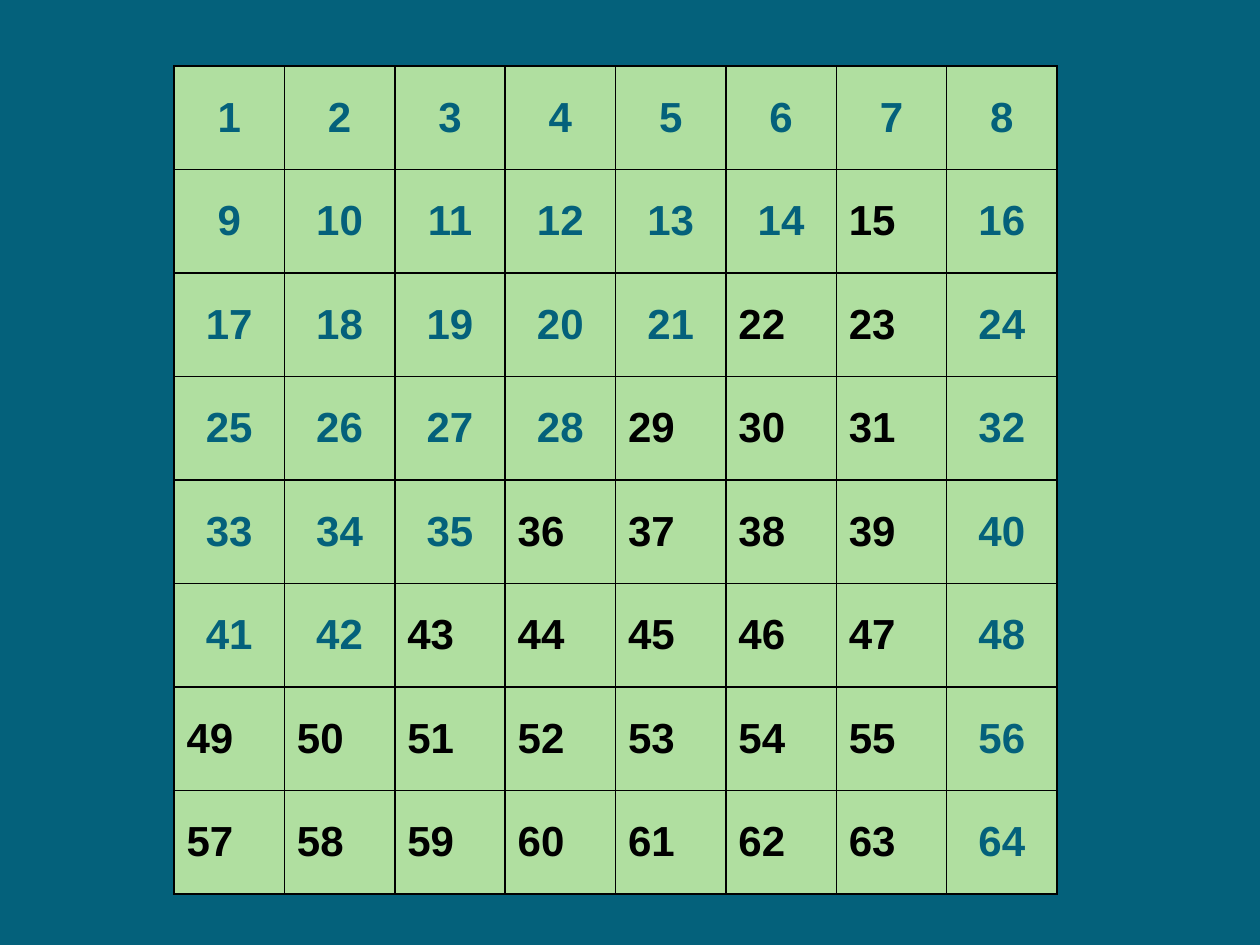
"""Build a slide with an eight by eight grid of the numbers 1 to 64."""
from lxml import etree
from pptx import Presentation
from pptx import util as u
from pptx.dml import color
from pptx.enum import text
from pptx.oxml import ns

PX = 914400 / 126
SIZE = 8
BLUE, GREEN, BLACK = "04617B", "B0DFA0", "000000"


def paint(fill, tone):
    fill.solid()
    fill.fore_color.rgb = color.RGBColor.from_string(tone)


def edge(cell):
    props = cell._tc.get_or_add_tcPr()
    for side in ("lnL", "lnR", "lnT", "lnB"):
        line = etree.SubElement(props, ns.qn(f"a:{side}"), w=str(u.Pt(1)))
        solid = etree.SubElement(line, ns.qn("a:solidFill"))
        etree.SubElement(solid, ns.qn("a:srgbClr"), val=BLACK)


deck = Presentation()
deck.slide_width, deck.slide_height = round(1260 * PX), round(945 * PX)
slide = deck.slides.add_slide(deck.slide_layouts[6])
paint(slide.background.fill, BLUE)

left, top, width, height = (round(n * PX) for n in (174, 66, 883, 828))
grid = slide.shapes.add_table(SIZE, SIZE, left, top, width, height).table
grid.first_row = grid.horz_banding = False

for row in range(SIZE):
    for col in range(SIZE):
        cell = grid.cell(row, col)
        edge(cell)
        paint(cell.fill, GREEN)
        cell.vertical_anchor = text.MSO_ANCHOR.MIDDLE
        cell.text_frame.text = str(row * SIZE + col + 1)
        para = cell.text_frame.paragraphs[0]
        marked = col == SIZE - 1 or (row < 6 and row + col < 7)
        para.alignment = text.PP_ALIGN.CENTER if marked else text.PP_ALIGN.LEFT
        font = para.runs[0].font
        font.name, font.size, font.bold = "Arial", u.Pt(24), True
        paint(font.fill, BLUE if marked else BLACK)

deck.save("out.pptx")
